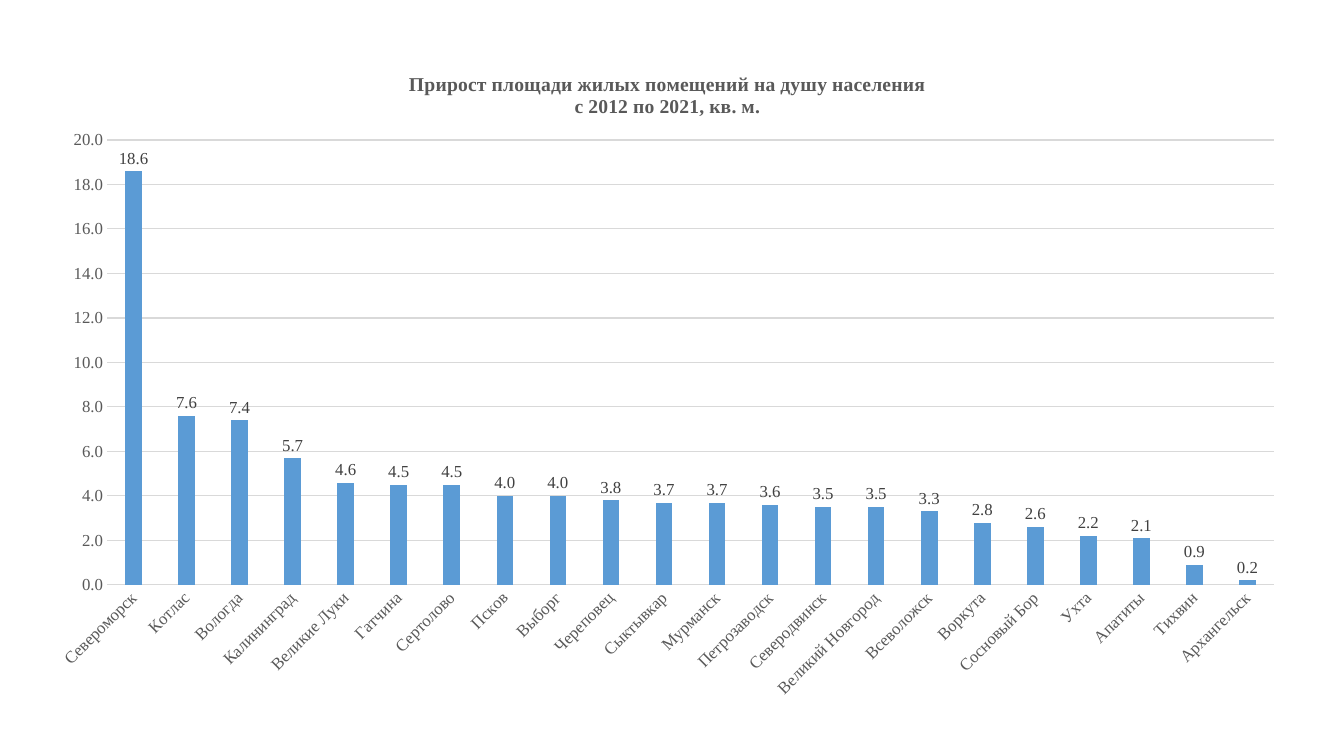
from lxml import etree
from pptx import Presentation, util as u
from pptx.chart.data import CategoryChartData
from pptx.dml.color import RGBColor
from pptx.enum import chart as ch
from pptx.oxml.ns import qn

# Content
TITLE = ["Прирост площади жилых помещений на душу населения",
         "с 2012 по 2021, кв. м."]
GROWTH = [
    ("Североморск", 18.6), ("Котлас", 7.6), ("Вологда", 7.4),
    ("Калининград", 5.7), ("Великие Луки", 4.6), ("Гатчина", 4.5),
    ("Сертолово", 4.5), ("Псков", 4.0), ("Выборг", 4.0),
    ("Череповец", 3.8), ("Сыктывкар", 3.7), ("Мурманск", 3.7),
    ("Петрозаводск", 3.6), ("Северодвинск", 3.5),
    ("Великий Новгород", 3.5), ("Всеволожск", 3.3), ("Воркута", 2.8),
    ("Сосновый Бор", 2.6), ("Ухта", 2.2), ("Апатиты", 2.1),
    ("Тихвин", 0.9), ("Архангельск", 0.2),
]
FACE, GREY, DARK, RULE, BLUE = (
    "Times New Roman", "595959", "404040", "D9D9D9", "5B9BD5")

# Places in px: left, top, width, height
SIZE = 1344, 756
CHART = 35, 44, 1264, 665
PLOT = 107, 140, 1167, 445
HEAD = 406, 69


def px(n):
    return u.Emu(round(n * 914400 / 100.8))


def color(code):
    return RGBColor.from_string(code)


def style(font, size=12, code=GREY, bold=False):
    font.name, font.size, font.bold = FACE, u.Pt(size), bold
    font.color.rgb = color(code)


def write(frame, lines, **form):
    for i, line in enumerate(lines):
        para = frame.paragraphs[0] if i == 0 else frame.add_paragraph()
        run = para.add_run()
        run.text = line
        style(run.font, **form)


def rule(line):
    line.color.rgb = color(RULE)
    line.width = u.Pt(0.75)


def place(node, index, box, inner=False):
    """Fix a chart part at a px box, as fractions of the chart."""
    for old in node.findall(qn("c:layout")):
        node.remove(old)
    layout = etree.Element(qn("c:layout"))
    node.insert(index, layout)
    manual = etree.SubElement(layout, qn("c:manualLayout"))
    left, top, wide, high = CHART
    items = [("layoutTarget", "inner")] if inner else []
    items += [("xMode", "edge"), ("yMode", "edge")]
    parts = (box[0] - left, box[1] - top) + box[2:]
    items += [(key, f"{part / full:.4f}") for key, part, full
              in zip("xywh", parts, (wide, high, wide, high))]
    for key, val in items:
        etree.SubElement(manual, qn("c:" + key)).set("val", val)


deck = Presentation()
deck.slide_width, deck.slide_height = map(px, SIZE)
slide = deck.slides.add_slide(deck.slide_layouts[6])

# Chart
data = CategoryChartData(number_format="0.0")
data.categories = [town for town, _ in GROWTH]
data.add_series("Series 1", [val for _, val in GROWTH])
chart = slide.shapes.add_chart(
    ch.XL_CHART_TYPE.COLUMN_CLUSTERED, *map(px, CHART), data).chart
chart.has_legend = False
style(chart.font, code="000000")

# Title
chart.has_title = True
title = chart.chart_title
write(title.text_frame, TITLE, size=14, bold=True)
title.include_in_layout = False
root = chart.element
place(root.find(".//" + qn("c:title")), 1, HEAD)
place(root.find(".//" + qn("c:plotArea")), 0, PLOT, inner=True)

# Axes
towns, scale = chart.category_axis, chart.value_axis
for axis in (towns, scale):
    axis.major_tick_mark = axis.minor_tick_mark = ch.XL_TICK_MARK.NONE
    style(axis.tick_labels.font)
rule(towns.format.line)
towns.has_major_gridlines = False
body = root.find(".//" + qn("c:catAx")).find(".//" + qn("a:bodyPr"))
body.set("rot", "-2700000")
body.set("vert", "horz")
scale.minimum_scale, scale.maximum_scale, scale.major_unit = 0, 20, 2
scale.format.line.fill.background()
rule(scale.major_gridlines.format.line)
scale.tick_labels.number_format = "0.0"
scale.tick_labels.number_format_is_linked = False

# Columns and their labels
plot = chart.plots[0]
plot.vary_by_categories = False
plot.gap_width, plot.overlap = 219, -27
bars = plot.series[0]
bars.invert_if_negative = False
bars.format.fill.solid()
bars.format.fill.fore_color.rgb = color(BLUE)
tags = bars.data_labels
tags.show_value = True
tags.position = ch.XL_LABEL_POSITION.OUTSIDE_END
tags.number_format, tags.number_format_is_linked = "0.0", False
style(tags.font, code=DARK)

deck.save("out.pptx")
